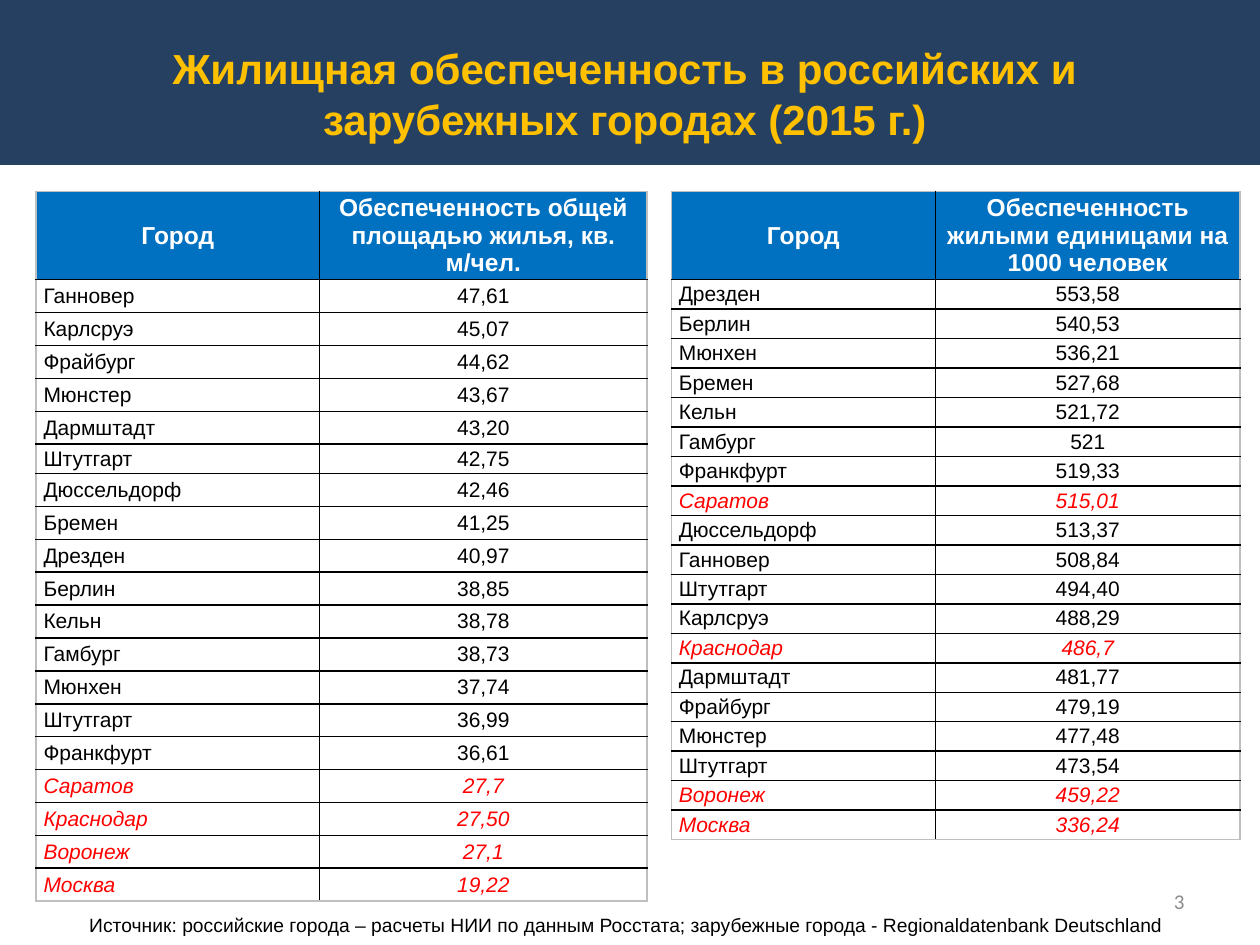
"""Build a slide with two tables of housing provision by city."""
import pptx
import pptx.dml.color
import pptx.enum.shapes
import pptx.enum.text
import pptx.util
from lxml import etree

Pt = pptx.util.Pt
ALIGN = pptx.enum.text.PP_ALIGN
MIDDLE = pptx.enum.text.MSO_ANCHOR.MIDDLE
NS = "http://schemas.openxmlformats.org/drawingml/2006/main"
COLORS = {
    "banner": "254061", "title": "FFC000", "header": "0070C0", "white": "FFFFFF",
    "text": "000000", "russia": "FF0000", "number": "8C8C8C", "edge": "BFBFBF",
}
RUSSIAN = {"Саратов", "Краснодар", "Воронеж", "Москва"}
TABLES = [
    {"left": 20.6, "widths": (162, 187.2), "row": 18.8, "short_row": 6,
     "header": "Обеспеченность общей площадью жилья, кв. м/чел.",
     "rows": [("Ганновер", "47,61"), ("Карлсруэ", "45,07"), ("Фрайбург", "44,62"),
              ("Мюнстер", "43,67"), ("Дармштадт", "43,20"), ("Штутгарт", "42,75"),
              ("Дюссельдорф", "42,46"), ("Бремен", "41,25"), ("Дрезден", "40,97"),
              ("Берлин", "38,85"), ("Кельн", "38,78"), ("Гамбург", "38,73"),
              ("Мюнхен", "37,74"), ("Штутгарт", "36,99"), ("Франкфурт", "36,61"),
              ("Саратов", "27,7"), ("Краснодар", "27,50"), ("Воронеж", "27,1"),
              ("Москва", "19,22")]},
    {"left": 383.6, "widths": (151, 174), "row": 16.84, "short_row": None,
     "header": "Обеспеченность жилыми единицами на 1000 человек",
     "rows": [("Дрезден", "553,58"), ("Берлин", "540,53"), ("Мюнхен", "536,21"),
              ("Бремен", "527,68"), ("Кельн", "521,72"), ("Гамбург", "521"),
              ("Франкфурт", "519,33"), ("Саратов", "515,01"), ("Дюссельдорф", "513,37"),
              ("Ганновер", "508,84"), ("Штутгарт", "494,40"), ("Карлсруэ", "488,29"),
              ("Краснодар", "486,7"), ("Дармштадт", "481,77"), ("Фрайбург", "479,19"),
              ("Мюнстер", "477,48"), ("Штутгарт", "473,54"), ("Воронеж", "459,22"),
              ("Москва", "336,24")]},
]


def write(tf, text, size, color, align, font="Arial", bold=False, italic=False):
    tf.word_wrap = True
    p = tf.paragraphs[0]
    p.text = text
    p.alignment = align
    p.font.name = font
    p.font.size = Pt(size)
    p.font.bold = bold
    p.font.italic = italic
    p.font.color.rgb = pptx.dml.color.RGBColor.from_string(COLORS[color])


def add_borders(cell, outer):
    tcPr = cell._tc.get_or_add_tcPr()
    for i, side in enumerate(("lnL", "lnR", "lnT", "lnB")):
        ln = etree.Element(f"{{{NS}}}{side}", w=str(Pt(1)))
        fill = etree.SubElement(ln, f"{{{NS}}}solidFill")
        etree.SubElement(fill, f"{{{NS}}}srgbClr", val=COLORS["edge" if outer[i] else "text"])
        tcPr.insert(i, ln)


prs = pptx.Presentation()
prs.slide_width, prs.slide_height = Pt(720), Pt(540)
s = prs.slides.add_slide(prs.slide_layouts[6])

sp = s.shapes.add_shape(pptx.enum.shapes.MSO_SHAPE.RECTANGLE, 0, 0, Pt(720), Pt(94.3))
sp.shadow.inherit = False
sp.fill.solid()
sp.fill.fore_color.rgb = pptx.dml.color.RGBColor.from_string(COLORS["banner"])
sp.line.fill.background()

tf = s.shapes.add_textbox(Pt(516), Pt(500.5), Pt(168), Pt(28.8)).text_frame
tf.vertical_anchor = MIDDLE
write(tf, "3", 12, "number", ALIGN.RIGHT, font="Calibri")

for data in TABLES:
    rows = [("Город", data["header"])] + data["rows"]
    heights = [50.4] + [data["row"]] * len(data["rows"])
    if data["short_row"]:
        heights[data["short_row"]] = 16.8
    frame = s.shapes.add_table(len(rows), 2, Pt(data["left"]), Pt(109.4),
                               Pt(sum(data["widths"])), Pt(sum(heights)))
    table = frame.table
    for column, width in zip(table.columns, data["widths"]):
        column.width = Pt(width)
    for r, (row, height) in enumerate(zip(rows, heights)):
        table.rows[r].height = Pt(height)
        for c, text in enumerate(row):
            cell = table.cell(r, c)
            cell.margin_left = cell.margin_right = Pt(4.3)
            cell.margin_top = cell.margin_bottom = 0
            cell.vertical_anchor = MIDDLE
            if r == 0:
                cell.fill.solid()
                cell.fill.fore_color.rgb = pptx.dml.color.RGBColor.from_string(COLORS["header"])
                write(cell.text_frame, text, 14, "white", ALIGN.CENTER, bold=True)
            else:
                cell.fill.background()
                russian = row[0] in RUSSIAN
                write(cell.text_frame, text, 12, "russia" if russian else "text",
                      ALIGN.CENTER if c else ALIGN.LEFT, italic=russian)
            add_borders(cell, (c == 0, c == 1, r == 0, r == len(rows) - 1))

tf = s.shapes.add_textbox(Pt(43.9), Pt(518.4), Pt(650), Pt(20.9)).text_frame
write(tf, "Источник: российские города – расчеты НИИ по данным Росстата; "
      "зарубежные города - Regionaldatenbank Deutschland", 11, "text", ALIGN.LEFT)

tf = s.shapes.add_textbox(Pt(25.5), Pt(20.9), Pt(663.1), Pt(87.1)).text_frame
write(tf, "Жилищная обеспеченность в российских и зарубежных городах (2015 г.)",
      24, "title", ALIGN.CENTER, bold=True)

prs.save("out.pptx")
